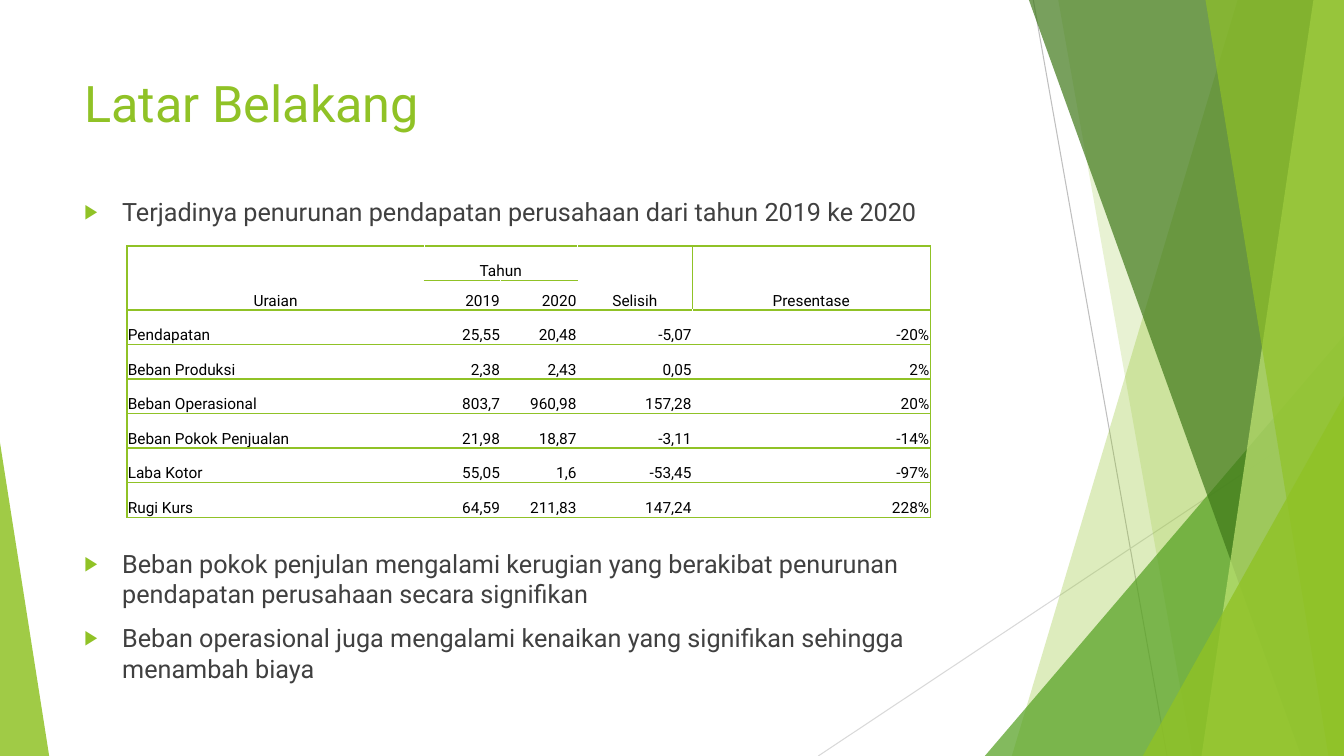
from lxml import etree
from pptx import Presentation
from pptx.dml.color import RGBColor
from pptx.enum import shapes, text
from pptx.oxml import ns
from pptx.util import Cm, Pt

LIME = RGBColor(0x90, 0xC2, 0x26)
PALE_LIME = RGBColor(0xC0, 0xE4, 0x74)
GREEN = RGBColor(0x54, 0xA0, 0x21)
DARK_GREEN = RGBColor(0x3F, 0x78, 0x19)
GREY = RGBColor(0xBF, 0xBF, 0xBF)
LIGHT_GREY = RGBColor(0xD9, 0xD9, 0xD9)
INK = RGBColor(0x40, 0x40, 0x40)
BLACK = RGBColor(0, 0, 0)
WHITE = RGBColor(0xFF, 0xFF, 0xFF)
WIDTH, HEIGHT = 33.87, 19.05


def write(frame, lines, size=18, color=INK, align=text.PP_ALIGN.LEFT, bullet=False):
    """Fill a text frame with one paragraph per line."""
    frame.word_wrap = True
    for number, line in enumerate(lines):
        para = frame.add_paragraph() if number else frame.paragraphs[0]
        para.alignment = align
        span = para.add_run()
        span.text = line
        span.font.name = "Roboto"
        span.font.size = Pt(size)
        span.font.color.rgb = color
        if bullet:
            para.space_before = Pt(10)
            props = para._p.get_or_add_pPr()
            props.set("marL", str(Cm(0.95)))
            props.set("indent", str(-Cm(0.95)))
            bullet_color = etree.SubElement(props, ns.qn("a:buClr"))
            etree.SubElement(bullet_color, ns.qn("a:srgbClr"), val=str(LIME))
            etree.SubElement(props, ns.qn("a:buSzPct"), val="80000")
            etree.SubElement(props, ns.qn("a:buFont"), typeface="Arial")
            etree.SubElement(props, ns.qn("a:buChar"), char="▶")


def paint(shape, color, opacity):
    """Give a shape a see-through fill with no line or shadow; opacity in percent."""
    shape.shadow.inherit = False
    shape.line.fill.background()
    shape.fill.solid()
    shape.fill.fore_color.rgb = color
    tint = shape._element.spPr.find(ns.qn("a:solidFill"))[0]
    etree.SubElement(tint, ns.qn("a:alpha"), val=str(opacity * 1000))


deck = Presentation()
deck.slide_width, deck.slide_height = Cm(WIDTH), Cm(HEIGHT)
page = deck.slides.add_slide(deck.slide_layouts[6])

# Thin crossing lines
for x1, y1, x2, y2, color in [
    (26.04, 0, 29.41, HEIGHT, GREY),
    (WIDTH, 10.24, 20.62, HEIGHT, LIGHT_GREY),
]:
    line = page.shapes.add_connector(
        shapes.MSO_CONNECTOR.STRAIGHT, Cm(x1), Cm(y1), Cm(x2), Cm(y2))
    line.line.color.rgb = color
    line.line.width = Pt(0.75)
    etree.SubElement(line._element.spPr, ns.qn("a:effectLst"))

# Facets: bands reach the right edge, triangles stand on the bottom edge
bands_behind = [(31.19, 25.5, LIME, 30), (26.67, 30.05, LIME, 20)]
bands_front = [
    (25.93, 32.79, DARK_GREEN, 70),
    (33.1, 30.28, PALE_LIME, 70),
    (30.38, 33.48, LIME, 65),
]
triangle_behind = [(24.82, 8.46, 9.05, 1, GREEN, 72)]
triangles_front = [(28.8, 9.98, 5.07, 1, LIME, 80), (0, 11.15, 1.24, 0, LIME, 85)]
for bands, triangles in [(bands_behind, triangle_behind), (bands_front, triangles_front)]:
    for top_x, bottom_x, color, opacity in bands:
        outline = page.shapes.build_freeform(Cm(top_x), 0)
        outline.add_line_segments([
            (Cm(WIDTH), 0), (Cm(WIDTH), Cm(HEIGHT)), (Cm(bottom_x), Cm(HEIGHT))])
        paint(outline.convert_to_shape(), color, opacity)
    for left, top, width, apex, color, opacity in triangles:
        triangle = page.shapes.add_shape(
            shapes.MSO_SHAPE.ISOSCELES_TRIANGLE,
            Cm(left), Cm(top), Cm(width), Cm(HEIGHT - top))
        triangle.adjustments[0] = apex
        paint(triangle, color, opacity)

# Title and bullets
for top, height, lines, style in [
    (1.7, 3.66, ["Latar Belakang"], {"size": 36, "color": LIME}),
    (4.83, 10.77, ["Terjadinya penurunan pendapatan perusahaan dari tahun 2019 ke 2020"],
     {"bullet": True}),
    (13.69, 10.77, [
        "Beban pokok penjulan mengalami kerugian yang berakibat penurunan "
        "pendapatan perusahaan secara signifikan",
        "Beban operasional juga mengalami kenaikan yang signifikan sehingga menambah biaya",
    ], {"bullet": True}),
]:
    box = page.shapes.add_textbox(Cm(1.88), Cm(top), Cm(23.88), Cm(height))
    write(box.text_frame, lines, **style)

# Financial table
rows = [
    ("Uraian", "Tahun", "", "Selisih", "Presentase"),
    ("", "2019", "2020", "", ""),
    ("Pendapatan", "25,55", "20,48", "-5,07", "-20%"),
    ("Beban Produksi", "2,38", "2,43", "0,05", "2%"),
    ("Beban Operasional", "803,7", "960,98", "157,28", "20%"),
    ("Beban Pokok Penjualan", "21,98", "18,87", "-3,11", "-14%"),
    ("Laba Kotor", "55,05", "1,6", "-53,45", "-97%"),
    ("Rugi Kurs", "64,59", "211,83", "147,24", "228%"),
]
column_widths = [7.49, 1.93, 1.93, 2.9, 5.99]
table = page.shapes.add_table(
    len(rows), len(column_widths), Cm(3.2), Cm(6.2), Cm(20.24), Cm(6.82)).table
table.first_row = table.horz_banding = False
for column, width in zip(table.columns, column_widths):
    column.width = Cm(width)
for r, row in enumerate(rows):
    table.rows[r].height = Cm(0.74 if r == 1 else 0.87)
    for c, value in enumerate(row):
        cell = table.cell(r, c)
        cell.margin_left = cell.margin_right = cell.margin_top = Cm(0.02)
        cell.margin_bottom = 0
        cell.vertical_anchor = text.MSO_ANCHOR.BOTTOM
        borders = {
            "a:lnL": c == 0 or (r < 2 and c == 4),
            "a:lnR": c == 4 or (r < 2 and c == 3),
            "a:lnT": True,
            "a:lnB": True,
        }
        for side, drawn in borders.items():
            if drawn:
                edge = etree.SubElement(
                    cell._tc.get_or_add_tcPr(), ns.qn(side), w=str(Pt(1)))
                edge_fill = etree.SubElement(edge, ns.qn("a:solidFill"))
                etree.SubElement(edge_fill, ns.qn("a:srgbClr"), val=str(LIME))
        cell.fill.solid()
        cell.fill.fore_color.rgb = WHITE
        if value:
            align = (text.PP_ALIGN.CENTER if r == 0
                     else text.PP_ALIGN.RIGHT if c else text.PP_ALIGN.LEFT)
            write(cell.text_frame, [value], size=11, color=BLACK, align=align)
for c in (0, 3, 4):
    table.cell(0, c).merge(table.cell(1, c))
table.cell(0, 1).merge(table.cell(0, 2))

deck.save("out.pptx")
